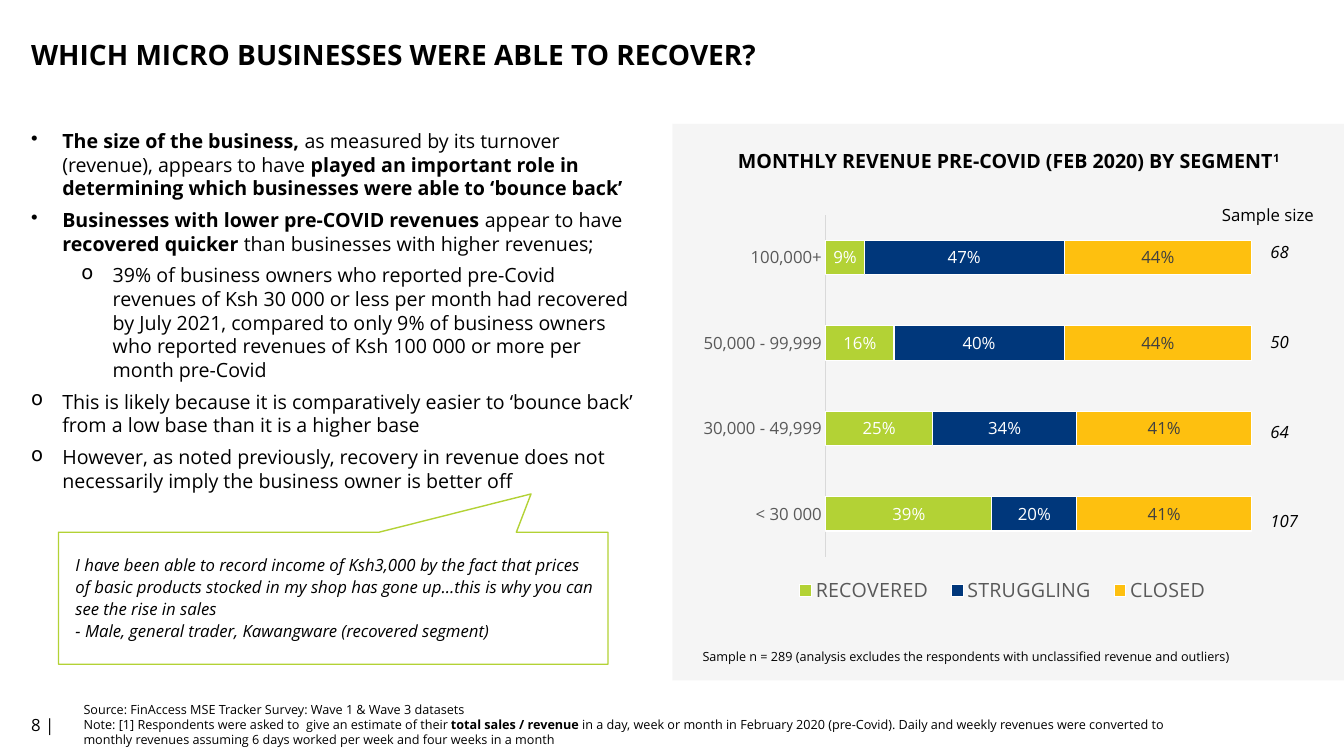
from dataclasses import dataclass
from typing import Optional

from lxml.etree import Element, SubElement
from pptx import Presentation
from pptx.chart.data import CategoryChartData
from pptx.dml.color import RGBColor
from pptx.enum.chart import XL_CHART_TYPE as ChartType, XL_LABEL_POSITION as LabelPosition
from pptx.enum.chart import XL_LEGEND_POSITION as LegendPosition, XL_TICK_MARK as TickMark
from pptx.enum.shapes import MSO_SHAPE as Preset
from pptx.enum.text import MSO_ANCHOR as Anchor, PP_ALIGN as Align
from pptx.oxml.ns import qn
from pptx.util import Inches, Pt


@dataclass(frozen=True)
class Theme:
    font: str = "Open Sans"
    black: str = "000000"
    white: str = "FFFFFF"
    panel: str = "F2F2F2"
    axis_line: str = "D9D9D9"
    axis_text: str = "595959"
    dark_label: str = "404040"
    green: str = "B3D235"
    navy: str = "00377B"
    yellow: str = "FEC00F"
    title: int = 20
    body: int = 14
    label: int = 12
    note: int = 9


@dataclass(frozen=True)
class Run:
    text: str
    bold: bool = False
    superscript: bool = False


@dataclass(frozen=True)
class Item:
    runs: tuple[Run, ...]
    bullet: Optional[str] = None
    level: int = 0


@dataclass(frozen=True)
class Box:
    left: float
    top: float
    width: float
    height: float

    def lengths(self) -> tuple:
        return tuple(Inches(n) for n in (self.left, self.top, self.width, self.height))


@dataclass(frozen=True)
class Segment:
    name: str
    values: tuple[float, ...]
    color: str
    label_color: str


THEME = Theme()

TITLE = Item((Run("WHICH MICRO BUSINESSES WERE ABLE TO RECOVER?", True),))
FINDINGS = [
    Item((Run("The size of the business, ", True),
          Run("as measured by its turnover (revenue), appears to have"),
          Run(" played an important role in determining which businesses were able to "
              "‘bounce back’", True)), "•"),
    Item((Run("Businesses with lower pre-COVID revenues ", True), Run("appear to have "),
          Run("recovered quicker", True), Run(" than businesses with higher revenues;")), "•"),
    Item((Run("39% of business owners who reported pre-Covid revenues of Ksh 30 000 or less per "
              "month had recovered by July 2021, compared to only 9% of business owners who "
              "reported revenues of Ksh 100 000 or more per month pre-Covid"),), "o", 1),
    Item((Run("This is likely because it is comparatively easier to ‘bounce back’ from a low "
              "base than it is a higher base"),), "o"),
    Item((Run("However, as noted previously, recovery in revenue does not necessarily imply the "
              "business owner is better off"),), "o"),
]
SOURCES = [
    Item((Run("Source: FinAccess MSE Tracker Survey: Wave 1 & Wave 3 datasets"),)),
    Item((Run("Note: [1] Respondents were asked to  give an estimate of their "),
          Run("total sales / revenue", True),
          Run(" in a day, week or month in February 2020 (pre-Covid). Daily and weekly revenues "
              "were converted to monthly revenues assuming 6 days worked per week and four weeks "
              "in a month"))),
]
QUOTE = [
    Item((Run("I have been able to record income of Ksh3,000 by the fact that prices of basic "
              "products stocked in my shop has gone up…this is why you can see the rise in "
              "sales"),)),
    Item((Run("- Male, general trader, Kawangware (recovered segment)"),)),
]
CHART_TITLE = Item((Run("MONTHLY REVENUE PRE-COVID (FEB 2020) BY SEGMENT", True),
                    Run("1", True, True)))
SAMPLE_NOTE = Item((Run("Sample n = 289 (analysis excludes the respondents with unclassified "
                        "revenue and outliers)"),))

REVENUE_BANDS = ("< 30 000", "30,000 - 49,999", "50,000 - 99,999", "100,000+")
SEGMENTS = [
    Segment("RECOVERED", (0.39, 0.25, 0.16, 0.09), THEME.green, THEME.white),
    Segment("STRUGGLING", (0.20, 0.34, 0.40, 0.47), THEME.navy, THEME.white),
    Segment("CLOSED", (0.41, 0.41, 0.44, 0.44), THEME.yellow, THEME.dark_label),
]
SAMPLE_SIZES = {"68": 0.89, "50": 0.89, "64": 0.89, "107": 0.95}


def rgb(color: str) -> RGBColor:
    return RGBColor.from_string(color)


def style_font(font, size: float, color: str = THEME.black, bold: bool = False,
               italic: bool = False) -> None:
    font.name, font.size, font.bold, font.italic = THEME.font, Pt(size), bold, italic
    font.color.rgb = rgb(color)


def write_text(frame, items: list[Item], *, size: float, italic: bool = False,
               align: Align = Align.LEFT, after: float = 0, spacing: float = 1.0) -> None:
    for index, item in enumerate(items):
        paragraph = frame.paragraphs[0] if index == 0 else frame.add_paragraph()
        paragraph.alignment, paragraph.level = align, item.level
        paragraph.space_after, paragraph.line_spacing = Pt(after), spacing
        if item.bullet:
            properties = paragraph._p.get_or_add_pPr()
            properties.set("marL", str(Inches(0.31 + 0.5 * item.level)))
            properties.set("indent", str(Inches(-0.31)))
            SubElement(properties, qn("a:buChar")).set("char", item.bullet)
        for part in item.runs:
            run = paragraph.add_run()
            run.text = part.text
            style_font(run.font, size, bold=part.bold, italic=italic)
            if part.superscript:
                run._r.get_or_add_rPr().set("baseline", "30000")


def add_text(slide, box: Box, items: list[Item], *, anchor: Anchor = Anchor.TOP,
             **text_format) -> None:
    frame = slide.shapes.add_textbox(*box.lengths()).text_frame
    frame.word_wrap, frame.vertical_anchor = True, anchor
    write_text(frame, items, **text_format)


def add_panel(slide) -> None:
    panel = slide.shapes.add_shape(Preset.RECTANGLE, *Box(6.67, 1.23, 6.66, 5.52).lengths())
    panel.shadow.inherit = False
    panel.fill.solid()
    panel.fill.fore_color.rgb = rgb(THEME.panel)
    color = panel._element.spPr.find(f".//{qn('a:srgbClr')}")
    SubElement(color, qn("a:alpha")).set("val", "70000")
    panel.line.fill.background()


def add_callout(slide) -> None:
    callout = slide.shapes.add_shape(Preset.RECTANGULAR_CALLOUT,
                                     *Box(0.58, 5.28, 5.45, 1.31).lengths())
    callout.shadow.inherit = False
    callout.adjustments[0], callout.adjustments[1] = 0.36, -0.79
    callout.fill.background()
    callout.line.color.rgb, callout.line.width = rgb(THEME.green), Pt(1)


def set_layout(parent, position: int, inner: bool, **fractions: float) -> None:
    """Place a chart part by fractions of the chart frame."""
    for old in parent.findall(qn("c:layout")):
        parent.remove(old)
    layout = Element(qn("c:layout"))
    parent.insert(position, layout)
    manual = SubElement(layout, qn("c:manualLayout"))
    settings = {"layoutTarget": "inner"} if inner else {}
    settings |= {"xMode": "edge", "yMode": "edge"} | fractions
    for name, value in settings.items():
        SubElement(manual, qn(f"c:{name}")).set("val", str(value))


def add_revenue_chart(slide) -> None:
    data = CategoryChartData(number_format="0%")
    data.categories = REVENUE_BANDS
    for segment in SEGMENTS:
        data.add_series(segment.name, segment.values)
    chart = slide.shapes.add_chart(ChartType.BAR_STACKED_100,
                                   *Box(4.83, 1.55, 10.88, 4.61).lengths(), data).chart
    style_font(chart.font, 10)
    chart.has_title = False

    # Axes
    bands, shares = chart.category_axis, chart.value_axis
    bands.major_tick_mark = bands.minor_tick_mark = TickMark.NONE
    style_font(bands.tick_labels.font, THEME.label, THEME.axis_text)
    bands.format.line.color.rgb, bands.format.line.width = rgb(THEME.axis_line), Pt(0.75)
    shares.visible = shares.has_major_gridlines = False
    shares.minimum_scale, shares.maximum_scale = 0, 1

    # Bars and their labels
    plot = chart.plots[0]
    plot.gap_width, plot.overlap, plot.vary_by_categories = 150, 100, False
    for series, segment in zip(plot.series, SEGMENTS):
        series.format.fill.solid()
        series.format.fill.fore_color.rgb = rgb(segment.color)
        series.format.line.color.rgb, series.format.line.width = rgb(THEME.white), Pt(0.75)
        labels = series.data_labels
        labels.show_value, labels.position = True, LabelPosition.CENTER
        labels.number_format, labels.number_format_is_linked = "0%", False
        style_font(labels.font, THEME.label, segment.label_color)

    # Legend and placement
    chart.has_legend = True
    chart.legend.position, chart.legend.include_in_layout = LegendPosition.BOTTOM, False
    style_font(chart.legend.font, THEME.body, THEME.axis_text)
    set_layout(chart.legend._element, 1, False, x=0.27, y=0.89, w=0.4, h=0.09)
    set_layout(chart._chartSpace.chart.plotArea, 0, True, x=0.309, y=0.126, w=0.388, h=0.736)


def add_sample_table(slide) -> None:
    table = slide.shapes.add_table(len(SAMPLE_SIZES), 1,
                                   *Box(12.5, 2.34, 0.62, 3.62).lengths()).table
    table.first_row = table.horz_banding = False
    table._tbl.tblPr.find(qn("a:tableStyleId")).text = "{2D5ABB26-0587-4C30-8999-92F81FD0307C}"
    for index, (count, height) in enumerate(SAMPLE_SIZES.items()):
        table.rows[index].height = Inches(height)
        cell = table.cell(index, 0)
        cell.fill.background()
        write_text(cell.text_frame, [Item((Run(count),))], size=THEME.label, italic=True)


def main() -> None:
    presentation = Presentation()
    presentation.slide_width, presentation.slide_height = Inches(13.33), Inches(7.5)
    slide = presentation.slides.add_slide(presentation.slide_layouts[6])

    # Panel, chart and sample sizes
    add_panel(slide)
    add_revenue_chart(slide)
    add_sample_table(slide)
    add_text(slide, Box(7.05, 1.43, 5.91, 0.4), [CHART_TITLE], size=THEME.body,
             align=Align.CENTER)
    add_text(slide, Box(11.82, 1.98, 1.51, 0.3), [Item((Run("Sample size"),))],
             size=THEME.label, align=Align.CENTER, after=6)
    add_text(slide, Box(6.87, 6.39, 5.46, 0.25), [SAMPLE_NOTE], size=THEME.note, after=6)

    # Title, findings and quote
    add_text(slide, Box(0.21, 0.05, 11.78, 1.02), [TITLE], size=THEME.title,
             anchor=Anchor.MIDDLE, spacing=0.9)
    add_text(slide, Box(0.21, 1.23, 6.25, 3.74), FINDINGS, size=THEME.body, after=6)
    add_text(slide, Box(0.65, 5.43, 5.34, 0.98), QUOTE, size=THEME.label, italic=True,
             spacing=1.1)
    add_callout(slide)

    # Footer
    add_text(slide, Box(0.21, 6.99, 0.69, 0.4), [Item((Run("8 |"),))], size=THEME.label,
             anchor=Anchor.MIDDLE)
    add_text(slide, Box(0.73, 6.99, 11.09, 0.4), SOURCES, size=THEME.note, anchor=Anchor.MIDDLE)

    presentation.save("out.pptx")


if __name__ == "__main__":
    main()
